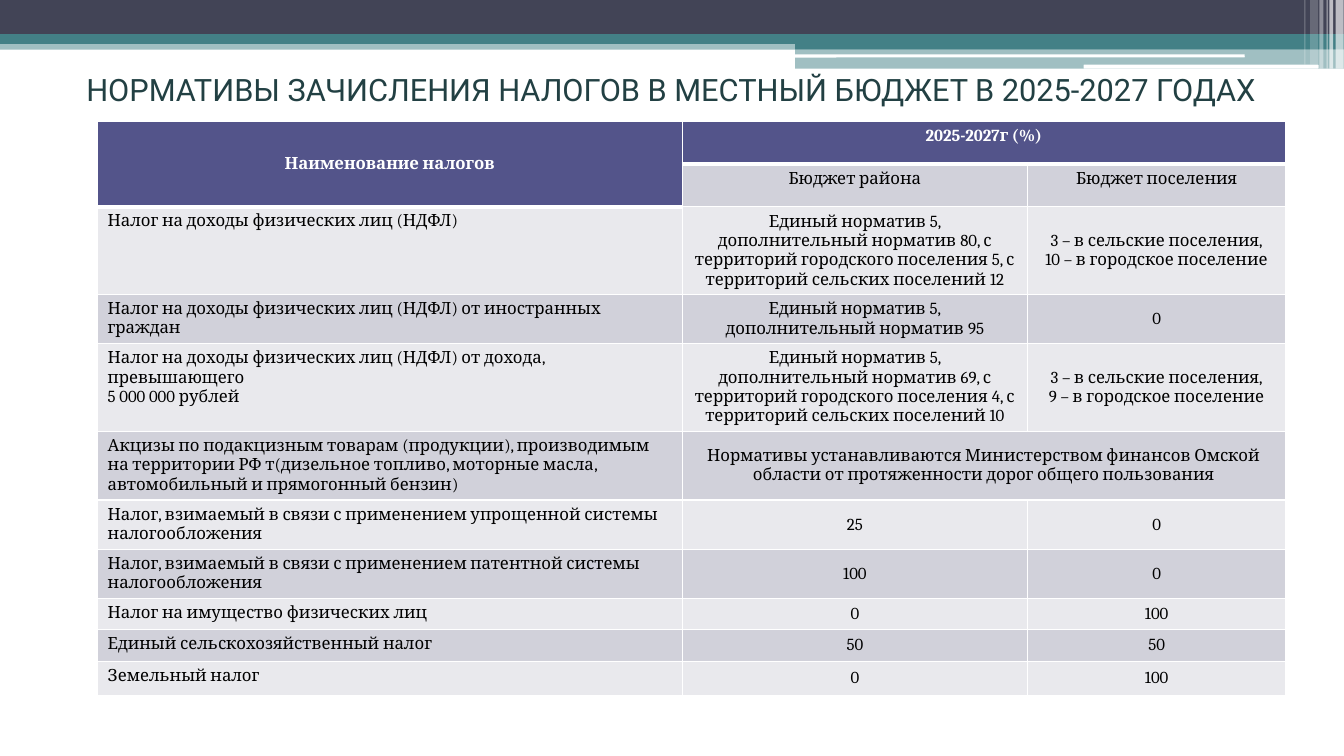
import pptx
import pptx.util
import pptx.dml.color
import pptx.enum.shapes
import pptx.enum.text
import pptx.oxml
import pptx.oxml.ns

Cm = pptx.util.Cm
Pt = pptx.util.Pt
SHAPE = pptx.enum.shapes.MSO_SHAPE
ALIGN = pptx.enum.text.PP_ALIGN
ANCHOR = pptx.enum.text.MSO_ANCHOR

COLORS = {
    "dark": "424456", "teal": "438086", "title": "224043", "head": "53548A",
    "odd": "D1D1DA", "even": "E9E9ED", "white": "FFFFFF", "black": "000000",
}

# left, top, width, height in cm, colour, opacity in percent
BARS = [
    (0, 1.02, 33.87, 0.23, "teal", 50),
    (0, 0, 33.87, 0.86, "dark", 100),
    (0, 0.86, 33.87, 0.25, "teal", 100),
    (20.04, 0.99, 13.83, 0.25, "teal", 100),
    (20.04, 1.22, 13.83, 0.51, "teal", 50),
]
SLITS = [
    (20.02, 1.37, 11.35, 0.08, "white", 100),
    (27.31, 1.63, 5.92, 0.1, "white", 100),
]
# left, width, height in cm, opacity in percent
STRIPES = [
    (33.66, 0.2, 1.73, 65), (33.5, 0.1, 1.73, 65), (33.43, 0.03, 1.73, 60),
    (33.25, 0.1, 1.73, 40), (33.02, 0.2, 1.63, 20), (32.87, 0.03, 1.63, 30),
]

WIDTHS = [14.73, 8.71, 6.5]
HEIGHTS = [1.07, 1.07, 2.21, 1.24, 2.21, 1.73, 1.24, 1.24, 0.79, 0.79, 0.86]
MERGES = [(0, 0, 1, 0), (0, 1, 0, 2), (5, 1, 5, 2)]
HEADS = [(0, 0), (1, 0), (0, 1), (0, 2)]
ROWS = [
    ("Наименование налогов", "2025-2027г (%)", ""),
    ("", "Бюджет района", "Бюджет поселения"),
    ("Налог на доходы физических лиц (НДФЛ)",
     "Единый норматив 5, дополнительный норматив 80, с территорий "
     "городского поселения 5, с территорий сельских поселений 12",
     "3 – в сельские поселения,\n10 – в городское поселение"),
    ("Налог на доходы физических лиц (НДФЛ) от иностранных граждан",
     "Единый норматив 5,\nдополнительный норматив 95", "0"),
    ("Налог на доходы физических лиц (НДФЛ) от дохода, превышающего\n"
     "5 000 000 рублей",
     "Единый норматив 5, дополнительный норматив 69, с территорий "
     "городского поселения 4, с территорий сельских поселений 10",
     "3 – в сельские поселения,\n9 – в городское поселение"),
    ("Акцизы по подакцизным товарам (продукции), производимым на территории "
     "РФ т(дизельное топливо, моторные масла, автомобильный и прямогонный "
     "бензин)",
     "Нормативы устанавливаются Министерством финансов Омской области "
     "от протяженности дорог общего пользования", ""),
    ("Налог, взимаемый в связи с применением упрощенной системы "
     "налогообложения", "25", "0"),
    ("Налог, взимаемый в связи с применением патентной системы "
     "налогообложения", "100", "0"),
    ("Налог на имущество физических лиц", "0", "100"),
    ("Единый сельскохозяйственный налог", "50", "50"),
    ("Земельный налог", "0", "100"),
]


def rgb(name):
    return pptx.dml.color.RGBColor.from_string(COLORS[name])


def set_font(para, face, size, color, bold=False):
    font = para.font
    font.name, font.size, font.bold = face, Pt(size), bold
    font.color.rgb = rgb(color)


def add_bar(slide, left, top, width, height, color, alpha, kind=SHAPE.RECTANGLE):
    bar = slide.shapes.add_shape(kind, Cm(left), Cm(top), Cm(width), Cm(height))
    bar.shadow.inherit = False
    bar.line.fill.background()
    bar.fill.solid()
    bar.fill.fore_color.rgb = rgb(color)
    if alpha < 100:
        tint = bar.fill._xPr.find(".//" + pptx.oxml.ns.qn("a:srgbClr"))
        pptx.oxml.ns.qn("a:alpha")
        tint.append(pptx.oxml.parse_xml(
            f'<a:alpha {pptx.oxml.ns.nsdecls("a")} val="{alpha * 1000}"/>'))


def add_band(slide):
    """Draw the striped band along the top edge."""
    for bar in BARS:
        add_bar(slide, *bar)
    for slit in SLITS:
        add_bar(slide, *slit, kind=SHAPE.ROUNDED_RECTANGLE)
    for left, width, height, alpha in STRIPES:
        add_bar(slide, left, 0, width, height, "white", alpha)


def set_title(slide, text):
    title = slide.shapes.title
    title.left, title.top = Cm(1.6), Cm(1.73)
    title.width, title.height = Cm(30.63), Cm(1.04)
    frame = title.text_frame
    frame.text = text
    frame.word_wrap = True
    frame.auto_size = pptx.enum.text.MSO_AUTO_SIZE.NONE
    frame.vertical_anchor = ANCHOR.MIDDLE
    para = frame.paragraphs[0]
    para.alignment = ALIGN.CENTER
    set_font(para, "Roboto", 22, "title")


def set_edges(cell, base):
    """Give a cell white borders, the bottom one base points wide."""
    props = cell._tc.get_or_add_tcPr()
    for spot, (side, width) in enumerate(zip("LRTB", (1, 1, 1, base))):
        props.insert(spot, pptx.oxml.parse_xml(
            f'<a:ln{side} {pptx.oxml.ns.nsdecls("a")} w="{Pt(width)}">'
            f'<a:solidFill><a:srgbClr val="{COLORS["white"]}"/></a:solidFill>'
            f'</a:ln{side}>'))


def fill_cell(cell, text, row, col):
    head = (row, col) in HEADS
    cell.fill.solid()
    cell.fill.fore_color.rgb = rgb("head" if head else ("even", "odd")[row % 2])
    set_edges(cell, 3 if head else 1)
    cell.text = text
    body = row > 1
    middle = (body and col > 0) or (row, col) == (0, 0)
    cell.vertical_anchor = ANCHOR.MIDDLE if middle else ANCHOR.TOP
    for para in cell.text_frame.paragraphs:
        para.alignment = ALIGN.LEFT if body and col == 0 else ALIGN.CENTER
        set_font(para, "Cambria", 12, "white" if head else "black", head)


def add_rates(slide):
    """Add the table of tax shares."""
    table = slide.shapes.add_table(
        len(ROWS), len(WIDTHS), Cm(2.46), Cm(3.07),
        Cm(sum(WIDTHS)), Cm(sum(HEIGHTS))).table
    table.first_row = table.horz_banding = False
    for column, width in zip(table.columns, WIDTHS):
        column.width = Cm(width)
    for line, height in zip(table.rows, HEIGHTS):
        line.height = Cm(height)
    for row, texts in enumerate(ROWS):
        for col, text in enumerate(texts):
            fill_cell(table.cell(row, col), text, row, col)
    for top, left, bottom, right in MERGES:
        table.cell(top, left).merge(table.cell(bottom, right))


def main():
    deck = pptx.Presentation()
    deck.slide_width, deck.slide_height = Cm(33.87), Cm(19.05)
    slide = deck.slides.add_slide(deck.slide_layouts[5])
    add_band(slide)
    set_title(slide, "НОРМАТИВЫ ЗАЧИСЛЕНИЯ НАЛОГОВ В МЕСТНЫЙ БЮДЖЕТ "
                     "В 2025-2027 ГОДАХ")
    add_rates(slide)
    deck.save("out.pptx")


if __name__ == "__main__":
    main()
